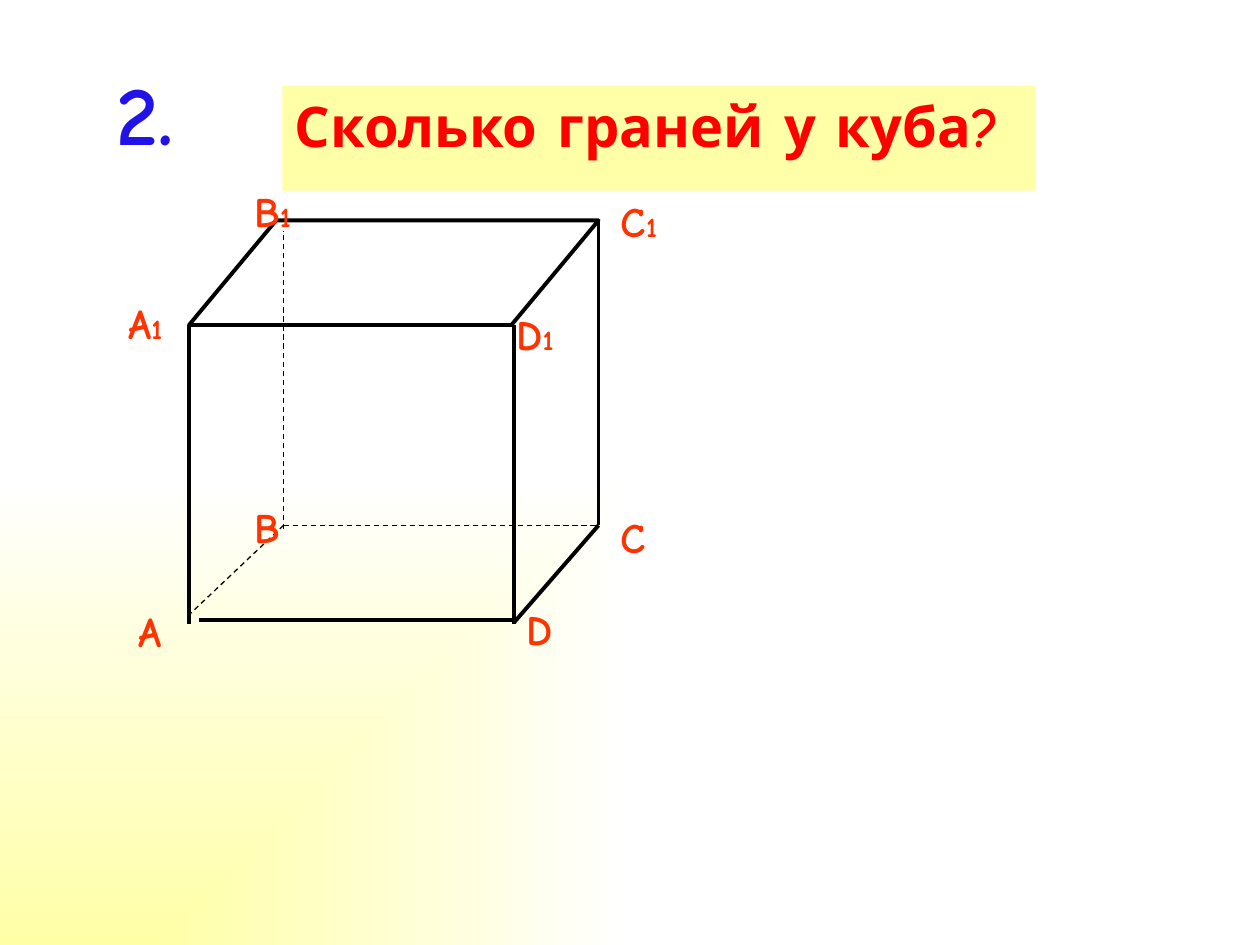
from lxml import etree
from pptx import Presentation
from pptx.dml.color import RGBColor
from pptx.enum.dml import MSO_LINE
from pptx.enum.shapes import MSO_CONNECTOR, MSO_SHAPE
from pptx.enum.text import MSO_ANCHOR, MSO_AUTO_SIZE, PP_ALIGN
from pptx.oxml.ns import qn
from pptx.util import Inches, Pt

COLORS = {
    "cream": "FFFFA7",
    "white": "FFFFFF",
    "question": "FF0000",
    "number": "2112E8",
    "vertex": "FF3300",
    "edge": "000000",
}
FONT = "Comic Neue"


def color(name):
    return RGBColor.from_string(COLORS[name])


def write(holder, text, size, color_name, index=""):
    """Fill a shape with one bold line, optionally ending in a smaller index."""
    frame = holder.text_frame
    frame.word_wrap = True
    frame.auto_size = MSO_AUTO_SIZE.SHAPE_TO_FIT_TEXT
    frame.vertical_anchor = MSO_ANCHOR.TOP
    line = frame.paragraphs[0]
    line.alignment = PP_ALIGN.LEFT
    line.font.name = FONT
    line.font.size = Pt(size)
    line.font.bold = True
    line.font.color.rgb = color(color_name)
    line.add_run().text = text
    if index:
        index_run = line.add_run()
        index_run.text = index
        index_run.font.size = Pt(16)


prs = Presentation()
prs.slide_width, prs.slide_height = Inches(10), Inches(7.5)
slide = prs.slides.add_slide(prs.slide_layouts[5])
shapes = slide.shapes

# Background: cream glow from the bottom-left corner
background = slide.background.fill
background.gradient()
for stop, name in zip(background.gradient_stops, ("cream", "white")):
    stop.color.rgb = color(name)
gradient = slide.element.find(".//" + qn("a:gradFill"))
linear = gradient.find(qn("a:lin"))
corner = etree.Element(qn("a:path"), path="rect")
etree.SubElement(corner, qn("a:fillToRect"), t="100000", r="100000")
gradient.replace(linear, corner)

# Question and its number
question = shapes.title
question.left, question.top = Inches(2.24), Inches(0.68)
question.width, question.height = Inches(5.98), Inches(0.63)
question.fill.solid()
question.fill.fore_color.rgb = color("cream")
write(question, "Сколько граней у куба?", 32, "question")

number = shapes.add_textbox(Inches(0.83), Inches(0.44), Inches(1.26), Inches(0.9))
write(number, "2.", 48, "number")

# Cube: top face, then the remaining edges
top_face = shapes.add_shape(
    MSO_SHAPE.PARALLELOGRAM, Inches(1.5), Inches(1.75), Inches(3.25), Inches(0.83)
)
top_face.adjustments[0] = 0.833
top_face.shadow.inherit = False
top_face.fill.background()
top_face.line.color.rgb = color("edge")
top_face.line.width = Pt(2.25)

edges = [  # x1, y1, x2, y2, hidden
    (2.25, 4.17, 4.75, 4.17, True),
    (4.75, 4.17, 4.08, 4.94, False),
    (1.58, 4.92, 4.08, 4.92, False),
    (2.25, 4.17, 1.5, 4.88, True),
    (1.5, 4.95, 1.5, 2.58, False),
    (2.25, 4.2, 2.25, 1.83, True),
    (4.08, 4.95, 4.08, 2.58, False),
    (4.75, 4.17, 4.75, 1.75, False),
]
for *ends, hidden in edges:
    edge = shapes.add_connector(MSO_CONNECTOR.STRAIGHT, *map(Inches, ends))
    edge.line.color.rgb = color("edge")
    edge.line.width = Pt(0.75 if hidden else 2.25)
    if hidden:
        edge.line.dash_style = MSO_LINE.DASH
    etree.SubElement(edge.element.spPr, qn("a:effectLst"))

# Vertex labels
vertices = [  # letter, index, left, top, width
    ("A", "", 1, 4.76, 0.5),
    ("D", "", 4.08, 4.74, 0.5),
    ("B", "", 1.92, 3.93, 0.5),
    ("C", "", 4.83, 4.01, 0.5),
    ("A", "1", 0.92, 2.31, 0.67),
    ("D", "1", 4, 2.4, 0.58),
    ("B", "1", 1.92, 1.42, 0.58),
    ("C", "1", 4.83, 1.5, 0.67),
]
for letter, index, left, top, width in vertices:
    vertex = shapes.add_textbox(Inches(left), Inches(top), Inches(width), Inches(0.5))
    write(vertex, letter, 24, "vertex", index)

prs.save("out.pptx")
